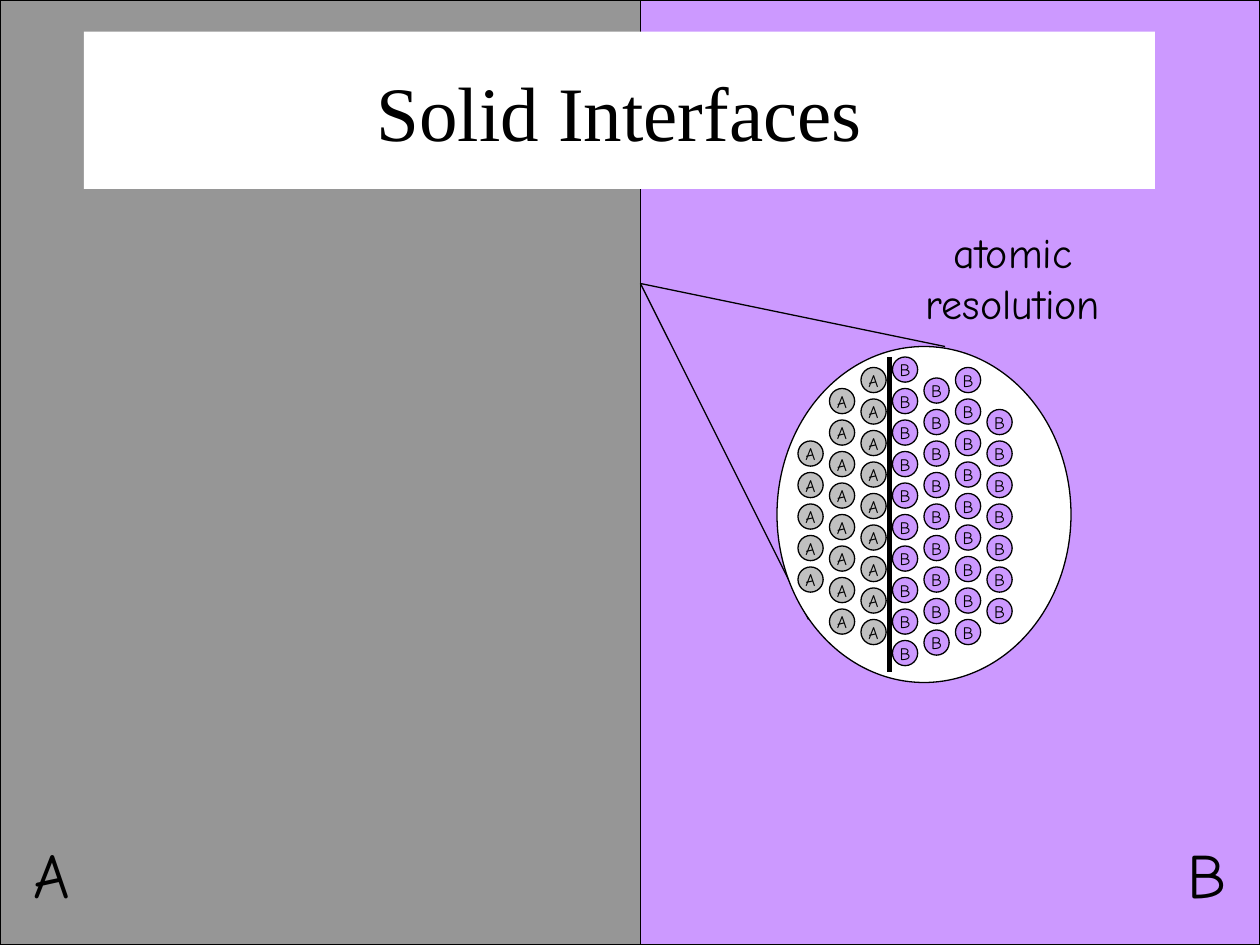
import pptx
import pptx.dml.color
import pptx.enum.shapes
import pptx.enum.text
import pptx.oxml.ns
import pptx.util
from lxml import etree

Pt = pptx.util.Pt
SHAPE = pptx.enum.shapes.MSO_SHAPE
ALIGN = pptx.enum.text.PP_ALIGN
ANCHOR = pptx.enum.text.MSO_ANCHOR
AUTO = pptx.enum.text.MSO_AUTO_SIZE

COLORS = {
    "black": "000000",
    "white": "FFFFFF",
    "solid_a": "969696",
    "solid_b": "CC99FF",
    "atom_a": "C0C0C0",
}
HAND = "Comic Neue"
SERIF = "Times New Roman"
ATOM_SIZE = 14.4
ATOM_PITCH = 18
ATOM_COLUMNS = [
    ("A", "atom_a", 126, 5),
    ("A", "atom_a", 96, 8),
    ("A", "atom_a", 84, 9),
    ("B", "solid_b", 78, 10),
    ("B", "solid_b", 90, 9),
    ("B", "solid_b", 84, 9),
    ("B", "solid_b", 108, 7),
]


def rgb(name):
    return pptx.dml.color.RGBColor.from_string(COLORS[name])


def set_text(tf, text, size, font=HAND, color="black", align=ALIGN.LEFT,
             anchor=ANCHOR.TOP, wrap=False):
    tf.word_wrap = wrap
    tf.vertical_anchor = anchor
    for i, line in enumerate(text.split("\n")):
        p = tf.add_paragraph() if i else tf.paragraphs[0]
        p.alignment = align
        r = p.add_run()
        r.text = line
        r.font.size = Pt(size)
        r.font.name = font
        r.font.color.rgb = rgb(color)


def add_label(shapes, box, text, size, align=ALIGN.LEFT):
    sp = shapes.add_textbox(*map(Pt, box))
    set_text(sp.text_frame, text, size, align=align)
    sp.text_frame.auto_size = AUTO.SHAPE_TO_FIT_TEXT


def add_outlined(shapes, kind, box, fill):
    sp = shapes.add_shape(kind, *map(Pt, box))
    sp.shadow.inherit = False
    sp.fill.solid()
    sp.fill.fore_color.rgb = rgb(fill)
    sp.line.color.rgb = rgb("black")
    sp.line.width = Pt(0.75)
    return sp


def add_line(shapes, x1, y1, x2, y2, width=0.75):
    line = shapes.add_connector(pptx.enum.shapes.MSO_CONNECTOR.STRAIGHT,
                                Pt(x1), Pt(y1), Pt(x2), Pt(y2))
    line.line.color.rgb = rgb("black")
    line.line.width = Pt(width)
    sp_pr = line.element.find(pptx.oxml.ns.qn("p:spPr"))
    etree.SubElement(sp_pr, pptx.oxml.ns.qn("a:effectLst"))


def add_solids(s, x, y, w, h):
    split = 366
    add_outlined(s.shapes, SHAPE.RECTANGLE, (x + split, y, w - split, h), "solid_b")
    add_outlined(s.shapes, SHAPE.RECTANGLE, (x, y, split, h), "solid_a")


def add_title(s, x, y, w, h):
    sp = s.shapes.title
    sp.left, sp.top, sp.width, sp.height = map(Pt, (x, y, w, h))
    sp.fill.solid()
    sp.fill.fore_color.rgb = rgb("white")
    set_text(sp.text_frame, "Solid Interfaces", 44, font=SERIF,
             align=ALIGN.CENTER, anchor=ANCHOR.MIDDLE, wrap=True)
    s.shapes.element.append(sp.element)


def add_solid_names(s, x, y, w, h):
    add_label(s.shapes, (x, y, 41, h), "A", 36)
    add_label(s.shapes, (x + w - 37.4, y, 37.4, h), "B", 36)


def add_atom(shapes, x, y, name, fill):
    sp = add_outlined(shapes, SHAPE.OVAL, (x, y, ATOM_SIZE, ATOM_SIZE), fill)
    set_text(sp.text_frame, name, 10, align=ALIGN.CENTER, anchor=ANCHOR.MIDDLE)


def add_atomic_view(s, x, y, w, h):
    shapes = s.shapes.add_group_shape().shapes
    add_line(shapes, x, y + 36, x + 174, y + 72)
    add_line(shapes, x, y + 36, x + 96, y + 228)
    add_outlined(shapes, SHAPE.OVAL, (x + 78, y + 72, w - 78, h - 72), "white")
    for col, (name, fill, top, count) in enumerate(ATOM_COLUMNS):
        for row in range(count):
            add_atom(shapes, x + 90 + col * ATOM_PITCH,
                     y + top + row * ATOM_PITCH, name, fill)
    add_line(shapes, x + 142.2, y + 78, x + 142.2, y + 258, width=3)
    add_label(shapes, (x + 149.5, y, 126.7, 65.5), "atomic\nresolution", 24,
              align=ALIGN.CENTER)


def main():
    prs = pptx.Presentation()
    prs.slide_width, prs.slide_height = Pt(720), Pt(540)
    s = prs.slides.add_slide(prs.slide_layouts[5])
    add_solids(s, 0, 0, 720, 540)
    add_title(s, 48, 18, 612, 90)
    add_solid_names(s, 12, 474, 697, 51)
    add_atomic_view(s, 366, 126, 246, 264)
    prs.save("out.pptx")


if __name__ == "__main__":
    main()
